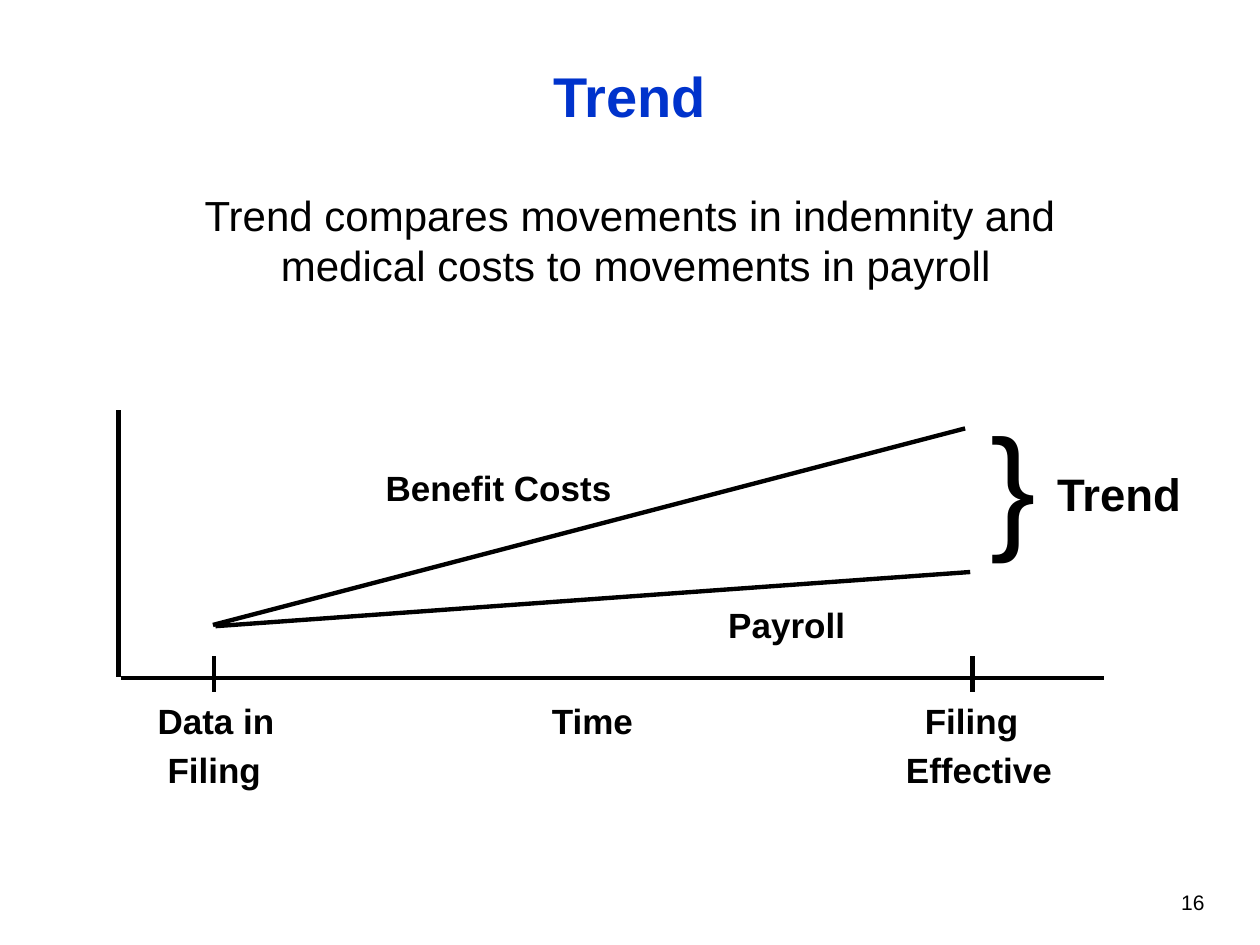
from dataclasses import dataclass

from lxml import etree
from pptx import Presentation
from pptx import util as u
from pptx.dml import color
from pptx.enum import shapes, text
from pptx.oxml import ns

COLUMNS, ROWS = 100, 75


@dataclass(frozen=True)
class Theme:
    font: str = "Arial"
    ink: str = "000000"
    heading: str = "0033CC"
    title: int = 32
    body: int = 24
    label: int = 20
    gap_label: int = 26
    brace: int = 78
    page: int = 12
    line: float = 2.5


@dataclass(frozen=True)
class Label:
    lines: tuple[str, ...]
    column: float
    row: float
    width: float
    height: float
    size: int
    bold: bool = True
    align: text.PP_ALIGN = text.PP_ALIGN.LEFT


@dataclass(frozen=True)
class Stroke:
    start: tuple[float, float]
    end: tuple[float, float]


THEME = Theme()
prs = Presentation()
prs.slide_width, prs.slide_height = u.Inches(10), u.Inches(7.5)


def x(column: float) -> int:
    return round(prs.slide_width * column / COLUMNS)


def y(row: float) -> int:
    return round(prs.slide_height * row / ROWS)


def write(frame, lines: tuple[str, ...], size: int, bold: bool,
          align: text.PP_ALIGN, ink: str = THEME.ink) -> None:
    frame.word_wrap = True
    font_format = {"name": THEME.font, "size": u.Pt(size), "bold": bold}
    for index, line in enumerate(lines):
        paragraph = frame.paragraphs[0] if index == 0 else frame.add_paragraph()
        paragraph.alignment = align
        run = paragraph.add_run()
        run.text = line
        for name, value in font_format.items():
            setattr(run.font, name, value)
        run.font.color.rgb = color.RGBColor.from_string(ink)


def draw_label(slide, label: Label) -> None:
    box = slide.shapes.add_textbox(
        x(label.column), y(label.row), x(label.width), y(label.height))
    for side in ("left", "top", "right", "bottom"):
        setattr(box.text_frame, f"margin_{side}", 0)
    write(box.text_frame, label.lines, label.size, label.bold, label.align)


def draw_stroke(slide, stroke: Stroke) -> None:
    (x1, y1), (x2, y2) = stroke.start, stroke.end
    line = slide.shapes.add_connector(
        shapes.MSO_CONNECTOR.STRAIGHT, x(x1), y(y1), x(x2), y(y2))
    line.line.color.rgb = color.RGBColor.from_string(THEME.ink)
    line.line.width = u.Pt(THEME.line)
    etree.SubElement(line._element.spPr, ns.qn("a:effectLst"))


def draw_title(slide, heading: str) -> None:
    title = slide.shapes.title
    place = {"left": x(7.5), "top": y(1.7), "width": x(85), "height": y(11.7)}
    for name, value in place.items():
        setattr(title, name, value)
    title.text_frame.vertical_anchor = text.MSO_ANCHOR.MIDDLE
    write(title.text_frame, (heading,), THEME.title, True,
          text.PP_ALIGN.CENTER, THEME.heading)


DATA_TICK, EFFECTIVE_TICK = 17, 77.2
TIME_AXIS = 53.8
TICK_TOP, TICK_BOTTOM = 52.1, 54.9
FIRST_ROW, SECOND_ROW = 55.5, 59.4

STROKES = (
    Stroke((9.6, TIME_AXIS), (87.6, TIME_AXIS)),
    *(Stroke((tick, TICK_BOTTOM), (tick, TICK_TOP))
      for tick in (DATA_TICK, EFFECTIVE_TICK)),
    Stroke((9.4, 53.7), (9.4, 32.5)),
    Stroke((17.1, 49.7), (77, 45.4)),
    Stroke((16.9, 49.6), (76.6, 34)),
)

LABELS = (
    Label(("Trend compares movements in indemnity and ",
           "medical costs to movements in payroll"),
          9.2, 15, 82.5, 12.5, THEME.body, False, text.PP_ALIGN.CENTER),
    Label(("Data in",), 12.5, FIRST_ROW, 9.9, 3.5, THEME.label),
    Label(("Filing",), 13.3, SECOND_ROW, 8.1, 3.5, THEME.label),
    Label(("Time",), 43.8, FIRST_ROW, 7, 3.5, THEME.label),
    Label(("Filing",), 73.4, FIRST_ROW, 8.1, 3.5, THEME.label),
    Label(("Effective",), 71.9, SECOND_ROW, 12.4, 3.5, THEME.label),
    Label(("}",), 78.6, 31.7, 4.1, 13.6, THEME.brace, False),
    Label(("Trend",), 83.9, 37, 11.1, 4.6, THEME.gap_label),
    Label(("Benefit Costs",), 30.6, 37, 19.1, 3.5, THEME.label),
    Label(("Payroll",), 57.8, 47.9, 10, 3.5, THEME.label),
    Label(("16",), 76.8, 70.6, 18.8, 4, THEME.page, False, text.PP_ALIGN.RIGHT),
)


def main() -> None:
    slide = prs.slides.add_slide(prs.slide_layouts.get_by_name("Title Only"))
    draw_title(slide, "Trend")
    for stroke in STROKES:
        draw_stroke(slide, stroke)
    for label in LABELS:
        draw_label(slide, label)
    prs.save("out.pptx")


if __name__ == "__main__":
    main()
